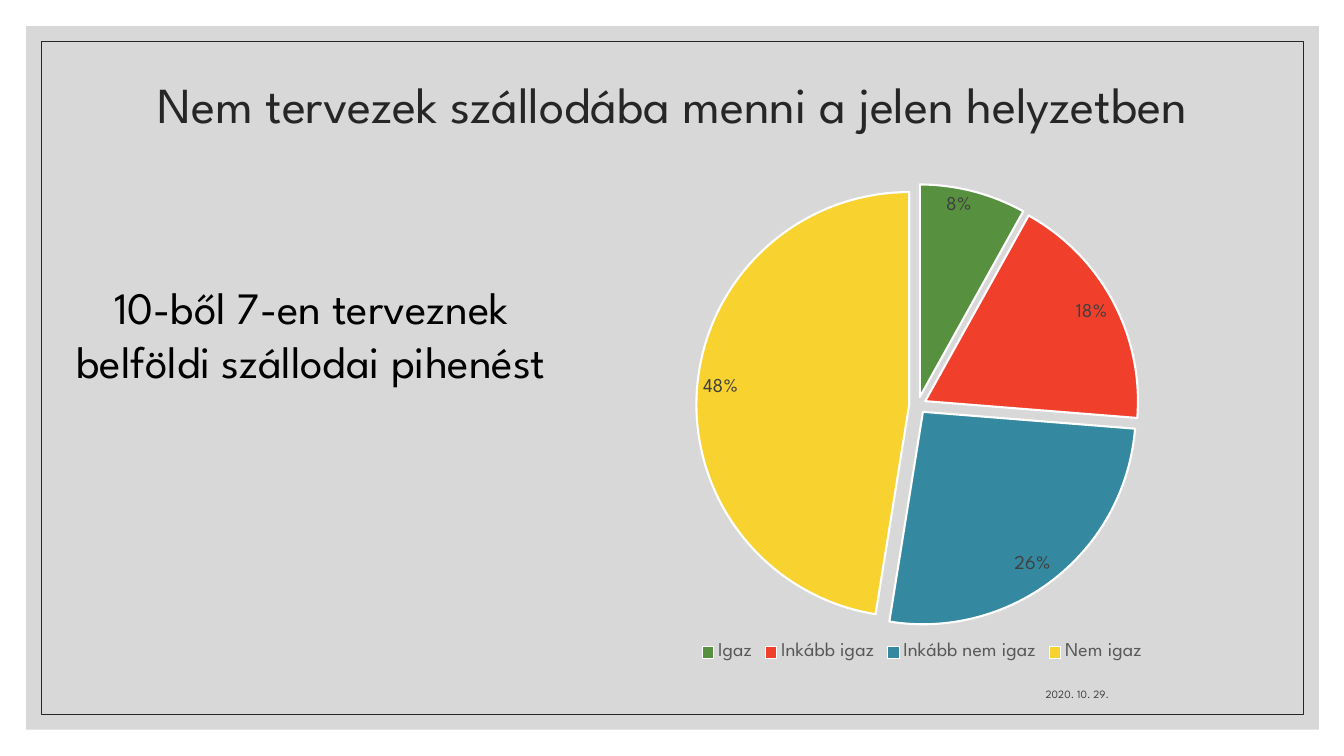
import pptx
import pptx.chart.data
import pptx.dml.color
import pptx.enum.chart
import pptx.enum.shapes
import pptx.enum.text
import pptx.oxml
import pptx.oxml.ns
import pptx.util

Inches = pptx.util.Inches
Pt = pptx.util.Pt
RGBColor = pptx.dml.color.RGBColor
ALIGN = pptx.enum.text.PP_ALIGN
ANCHOR = pptx.enum.text.MSO_ANCHOR
qn = pptx.oxml.ns.qn

FONT = "League Spartan"
WHITE = RGBColor(0xFF, 0xFF, 0xFF)
BLACK = RGBColor(0, 0, 0)
PANEL_GREY = RGBColor(0xBF, 0xBF, 0xBF)
DARK = RGBColor(0x26, 0x26, 0x26)
LABEL_GREY = RGBColor(0x40, 0x40, 0x40)
LEGEND_GREY = RGBColor(0x59, 0x59, 0x59)

# answer, share, shown label, slice colour
ANSWERS = [
    ("Igaz", 0.08, "8%", RGBColor(0x57, 0x90, 0x3F)),
    ("Inkább igaz", 0.18, "18%", RGBColor(0xF0, 0x3F, 0x2B)),
    ("Inkább nem igaz", 0.26, "26%", RGBColor(0x34, 0x88, 0xA0)),
    ("Nem igaz", 0.47, "48%", RGBColor(0xF8, 0xD2, 0x2F)),
]


def style_font(font, size, color):
    font.name = FONT
    font.size = Pt(size)
    font.bold = False
    font.color.rgb = color


def write_text(frame, text, size, color, align=ALIGN.CENTER, anchor=ANCHOR.TOP, line_spacing=None):
    frame.word_wrap = True
    frame.auto_size = pptx.enum.text.MSO_AUTO_SIZE.NONE
    frame.vertical_anchor = anchor
    paragraph = frame.paragraphs[0]
    paragraph.alignment = align
    paragraph.line_spacing = line_spacing
    run = paragraph.add_run()
    run.text = text
    style_font(run.font, size, color)


def add_frame(slide, left, top, width, height, inset=0.15):
    """Draw the translucent grey panel and the thin border inset within it."""
    rectangle = pptx.enum.shapes.MSO_SHAPE.RECTANGLE
    panel = slide.shapes.add_shape(rectangle, left, top, width, height)
    panel.shadow.inherit = False
    panel.fill.solid()
    panel.fill.fore_color.rgb = PANEL_GREY
    panel.line.fill.background()
    panel_color = next(panel._element.spPr.iter(qn("a:srgbClr")))
    pptx.oxml.ns  # namespace map used by qn
    alpha = panel_color.makeelement(qn("a:alpha"), {"val": "60000"})
    panel_color.append(alpha)

    gap = Inches(inset)
    border = slide.shapes.add_shape(rectangle, left + gap, top + gap, width - 2 * gap, height - 2 * gap)
    border.shadow.inherit = False
    border.fill.background()
    border.line.color.rgb = DARK
    border.line.width = Pt(0.5)


def add_title(slide, left, top, width, height):
    title = slide.shapes.title
    title.left, title.top, title.width, title.height = left, top, width, height
    write_text(title.text_frame, "Nem tervezek szállodába menni a jelen helyzetben",
               36, DARK, anchor=ANCHOR.MIDDLE, line_spacing=0.9)


def add_text(slide, box, text, size, color, **text_format):
    textbox = slide.shapes.add_textbox(*box)
    write_text(textbox.text_frame, text, size, color, **text_format)


def set_plot_area(chart, x, y, w, h):
    """Fix the inner plot area, given as fractions of the chart."""
    plot_area = next(chart._chartSpace.iter(qn("c:plotArea")))
    for old_layout in plot_area.findall(qn("c:layout")):
        plot_area.remove(old_layout)
    layout = plot_area.makeelement(qn("c:layout"), {})
    manual = layout.makeelement(qn("c:manualLayout"), {})
    layout.append(manual)
    settings = [("layoutTarget", "inner"), ("xMode", "edge"), ("yMode", "edge"),
                ("x", x), ("y", y), ("w", w), ("h", h)]
    for tag, value in settings:
        manual.append(manual.makeelement(qn("c:" + tag), {"val": str(value)}))
    plot_area.insert(0, layout)


def add_answer_pie(slide, left, top, width, height):
    answers = pptx.chart.data.CategoryChartData(number_format="0%")
    answers.categories = [answer for answer, *_ in ANSWERS]
    answers.add_series("Series 1", [share for _, share, *_ in ANSWERS])
    chart = slide.shapes.add_chart(pptx.enum.chart.XL_CHART_TYPE.PIE,
                                   left, top, width, height, answers).chart
    chart.has_title = False
    style_font(chart.font, 10, BLACK)
    chart.has_legend = True
    chart.legend.position = pptx.enum.chart.XL_LEGEND_POSITION.BOTTOM
    chart.legend.include_in_layout = False
    style_font(chart.legend.font, 14, LEGEND_GREY)
    set_plot_area(chart, 0.187, 0, 0.614, 0.919)

    pie = chart.plots[0]
    pie.vary_by_categories = True
    shares = pie.series[0]
    explosion = shares._element.makeelement(qn("c:explosion"), {"val": "4"})
    shares._element.find(qn("c:tx")).addnext(explosion)

    inside_end = pptx.enum.chart.XL_LABEL_POSITION.INSIDE_END
    labels = shares.data_labels
    labels.show_value = True
    labels.number_format = "0%"
    labels.number_format_is_linked = False
    labels.position = inside_end
    style_font(labels.font, 14, LABEL_GREY)

    for index, (_, share, shown, color) in enumerate(ANSWERS):
        point = shares.points[index]
        point.format.fill.solid()
        point.format.fill.fore_color.rgb = color
        point.format.line.color.rgb = WHITE
        point.format.line.width = Pt(1.5)
        if shown != f"{share:.0%}":
            label = point.data_label
            run = label.text_frame.paragraphs[0].add_run()
            run.text = shown
            style_font(run.font, 14, LABEL_GREY)
            label.position = inside_end


def build_chart_slide(presentation):
    slide = presentation.slides.add_slide(presentation.slide_layouts[5])
    slide.background.fill.solid()
    slide.background.fill.fore_color.rgb = WHITE
    add_frame(slide, Inches(0.26), Inches(0.26), Inches(12.82), Inches(6.98))
    # The title sits above the panel
    slide.shapes._spTree.append(slide.shapes.title._element)
    add_title(slide, Inches(0.48), Inches(0.5), Inches(12.38), Inches(1.12))
    add_text(slide, (Inches(7.94), Inches(6.6), Inches(3.16), Inches(0.4)),
             "2020. 10. 29.", 8, LABEL_GREY, align=ALIGN.RIGHT, anchor=ANCHOR.BOTTOM)
    add_text(slide, (Inches(0.61), Inches(2.73), Inches(4.96), Inches(1.72)),
             "10-ből 7-en terveznek belföldi szállodai pihenést", 32, BLACK)
    add_answer_pie(slide, Inches(5.57), Inches(1.82), Inches(7.15), Inches(4.78))


def main():
    presentation = pptx.Presentation()
    presentation.slide_width = Inches(13.33)
    presentation.slide_height = Inches(7.5)
    build_chart_slide(presentation)
    presentation.save("out.pptx")


if __name__ == "__main__":
    main()
